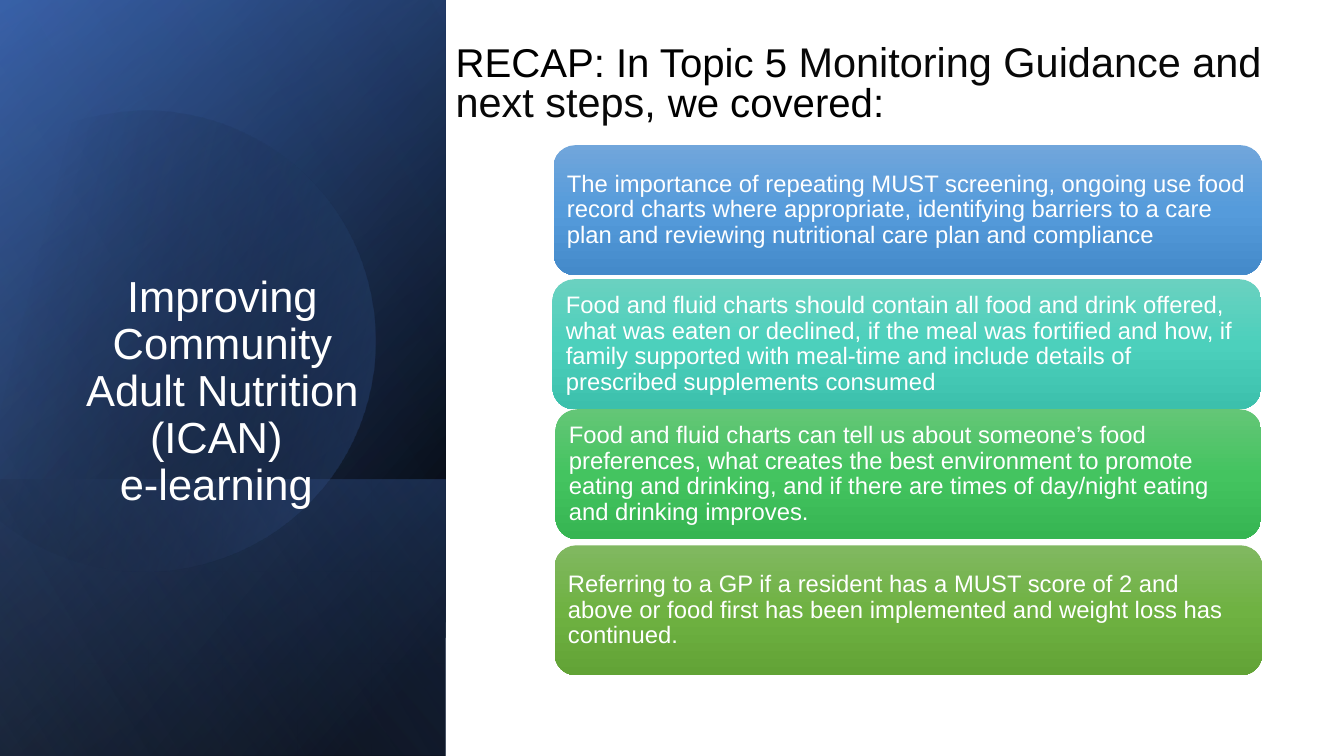
from math import cos, radians, sin

from lxml import etree
from pptx import Presentation
from pptx.dml.color import RGBColor
from pptx.enum.shapes import MSO_SHAPE as Shape
from pptx.enum.text import MSO_ANCHOR as Anchor, MSO_AUTO_SIZE as AutoSize, PP_ALIGN as Align
from pptx.oxml.ns import qn
from pptx.util import Inches, Pt

FONT = "Arial"
WHITE = RGBColor(0xFF, 0xFF, 0xFF)
BLACK = RGBColor(0x00, 0x00, 0x00)
NEAR_BLACK = RGBColor(0x08, 0x08, 0x08)
NAVY = RGBColor(0x2F, 0x55, 0x97)
BLUE = RGBColor(0x44, 0x72, 0xC4)
PALE_BLUE = RGBColor(0x8F, 0xAA, 0xDC)

# Content
TITLE = "Improving Community Adult Nutrition (ICAN) \ve-learning "
HEADING = [
    ("RECAP: In Topic 5 ", 28.7, BLACK),
    ("Monitoring Guidance and next steps, ", 29.6, NEAR_BLACK),
    ("we covered:", 28.7, BLACK),
]
# Cards: left, top, width, gradient colours, text
CARDS = [
    (5.49, 1.44, 7.03, ("71A6DB", "559BDB", "448ACA"),
     "The importance of repeating MUST screening, ongoing use food record charts where "
     "appropriate, identifying barriers to a care plan and reviewing nutritional care plan "
     "and compliance"),
    (5.48, 2.77, 7.03, ("6AD1C0", "4CD0BC", "3CC0AC"),
     "Food and fluid charts should contain all food and drink offered, what was eaten or "
     "declined, if the meal was fortified and how, if family supported with meal-time and "
     "include details of prescribed supplements consumed"),
    (5.51, 4.06, 7.0, ("64C677", "44C460", "36B552"),
     "Food and fluid charts can tell us about someone’s food preferences, what creates the "
     "best environment to promote eating and drinking, and if there are times of day/night "
     "eating and drinking improves."),
    (5.5, 5.41, 7.02, ("81B861", "6FB242", "62A336"),
     "Referring to a GP if a resident has a MUST score of 2 and above or food first has been "
     "implemented and weight loss has continued."),
]
CARD_HEIGHT = 1.29

# Side panel layers: top, height, gradient angle, stops (position %, colour, opacity %)
PANEL_WIDTH = 4.42
BASE_LAYERS = [
    (0, 7.5, 50, [(8, BLACK, 100), (100, NAVY, 100)]),
    (0, 7.5, 30, [(0, BLACK, 0), (99, BLUE, 46)]),
    (4.76, 2.74, 130, [(2, BLUE, 29), (100, BLACK, 30)]),
]
TOP_LAYER = (0, 7.5, 120, [(0, BLACK, 0), (99, PALE_BLUE, 11)])

# Disc outline: start, then cubic curves and straight lines
DISC_START = (1.49, 1.1)
DISC_SEGMENTS = [
    [(2.46, 1.12), (3.35, 1.77), (3.63, 2.75)],
    [(3.98, 3.97), (3.28, 5.23), (2.07, 5.58)],
    [(1.31, 5.8), (0.53, 5.61), (-0.03, 5.14)],
    [(-0.15, 5.03)],
    [(-0.15, 1.75)],
    [(0, 1.61)],
    [(0.23, 1.42), (0.5, 1.28), (0.8, 1.19)],
    [(1.03, 1.13), (1.26, 1.1), (1.49, 1.1)],
]
DISC_CENTRE = (1.585, 3.345)
DISC_TILT = 16.1
CURVE_STEPS = 24


def apply_gradient(shape, angle, stops):
    shape.shadow.inherit = False
    shape.line.fill.background()
    shape.fill.gradient()
    gradient = shape.element.spPr.find(qn("a:gradFill"))
    stop_list = gradient.find(qn("a:gsLst"))
    for old_stop in list(stop_list):
        stop_list.remove(old_stop)
    for position, colour, opacity in stops:
        stop = etree.SubElement(stop_list, qn("a:gs"), pos=str(position * 1000))
        rgb = etree.SubElement(stop, qn("a:srgbClr"), val=str(colour))
        if opacity < 100:
            etree.SubElement(rgb, qn("a:alpha"), val=str(opacity * 1000))
    gradient.find(qn("a:lin")).set("ang", str(angle * 60000))


def add_panel_layer(slide, top, height, angle, stops):
    # The layer lies on its side: its frame is height long and PANEL_WIDTH deep
    left = (PANEL_WIDTH - height) / 2
    layer = slide.shapes.add_shape(
        Shape.RECTANGLE, Inches(left), Inches(top - left),
        Inches(height), Inches(PANEL_WIDTH))
    layer.rotation = 90
    layer.element.spPr.find(qn("a:xfrm")).set("flipH", "1")
    apply_gradient(layer, angle, stops)


def disc_points():
    points = [DISC_START]
    for segment in DISC_SEGMENTS:
        if len(segment) == 1:
            points += segment
            continue
        curve = [points[-1], *segment]
        for step in range(1, CURVE_STEPS + 1):
            t = step / CURVE_STEPS
            weights = ((1 - t) ** 3, 3 * t * (1 - t) ** 2, 3 * t * t * (1 - t), t ** 3)
            points.append(tuple(sum(w * p[axis] for w, p in zip(weights, curve))
                                for axis in (0, 1)))
    return points


def turn(point):
    c, s = cos(radians(DISC_TILT)), sin(radians(DISC_TILT))
    dx, dy = (point[axis] - DISC_CENTRE[axis] for axis in (0, 1))
    return (Inches(DISC_CENTRE[0] + dx * c - dy * s),
            Inches(DISC_CENTRE[1] + dx * s + dy * c))


def add_disc(slide):
    points = [turn(point) for point in disc_points()]
    builder = slide.shapes.build_freeform(*points[0])
    builder.add_line_segments(points[1:], close=True)
    disc = builder.convert_to_shape()
    disc.rotation = 360 - DISC_TILT
    apply_gradient(disc, 30, [(29, BLACK, 0), (100, BLUE, 43)])


def format_frame(frame, anchor, inset=None):
    settings = {"word_wrap": True, "auto_size": AutoSize.NONE, "vertical_anchor": anchor}
    if inset is not None:
        for side in ("left", "top", "right", "bottom"):
            settings[f"margin_{side}"] = Inches(inset)
    for name, value in settings.items():
        setattr(frame, name, value)


def format_paragraph(paragraph, align, spacing):
    paragraph.alignment = align
    paragraph.line_spacing = spacing


def format_run(run, size, colour):
    for name, value in {"name": FONT, "size": Pt(size)}.items():
        setattr(run.font, name, value)
    run.font.color.rgb = colour


def write_text(frame, text, size, align):
    paragraph = frame.paragraphs[0]
    paragraph.text = text
    format_paragraph(paragraph, align, 0.9)
    for run in paragraph.runs:
        format_run(run, size, WHITE)


def place(shape, left, top, width, height):
    frame = {"left": left, "top": top, "width": width, "height": height}
    for name, value in frame.items():
        setattr(shape, name, Inches(value))


def main():
    presentation = Presentation()
    presentation.slide_width = Inches(13.33)
    presentation.slide_height = Inches(7.5)
    slide = presentation.slides.add_slide(presentation.slide_layouts[5])

    # Side panel
    for layer in BASE_LAYERS:
        add_panel_layer(slide, *layer)
    add_disc(slide)
    add_panel_layer(slide, *TOP_LAYER)

    # Title, brought in front of the panel
    title = slide.shapes.title
    slide.shapes.element.append(title.element)
    place(title, 0.5, 2.49, 3.41, 2.62)
    format_frame(title.text_frame, Anchor.BOTTOM)
    write_text(title.text_frame, TITLE, 31, Align.CENTER)

    # Cards
    for left, top, width, colours, text in CARDS:
        card = slide.shapes.add_shape(
            Shape.ROUNDED_RECTANGLE, Inches(left), Inches(top),
            Inches(width), Inches(CARD_HEIGHT))
        stops = [(position, colour, 100) for position, colour in zip((0, 50, 100), colours)]
        apply_gradient(card, 90, stops)
        format_frame(card.text_frame, Anchor.MIDDLE, 0.07)
        write_text(card.text_frame, text, 17, Align.LEFT)

    # Heading
    heading = slide.shapes.add_textbox(Inches(4.42), Inches(0.34), Inches(8.24), Inches(0.95))
    format_frame(heading.text_frame, Anchor.BOTTOM)
    paragraph = heading.text_frame.paragraphs[0]
    format_paragraph(paragraph, Align.LEFT, 0.8)
    for text, size, colour in HEADING:
        run = paragraph.add_run()
        run.text = text
        format_run(run, size, colour)

    presentation.save("out.pptx")


if __name__ == "__main__":
    main()
